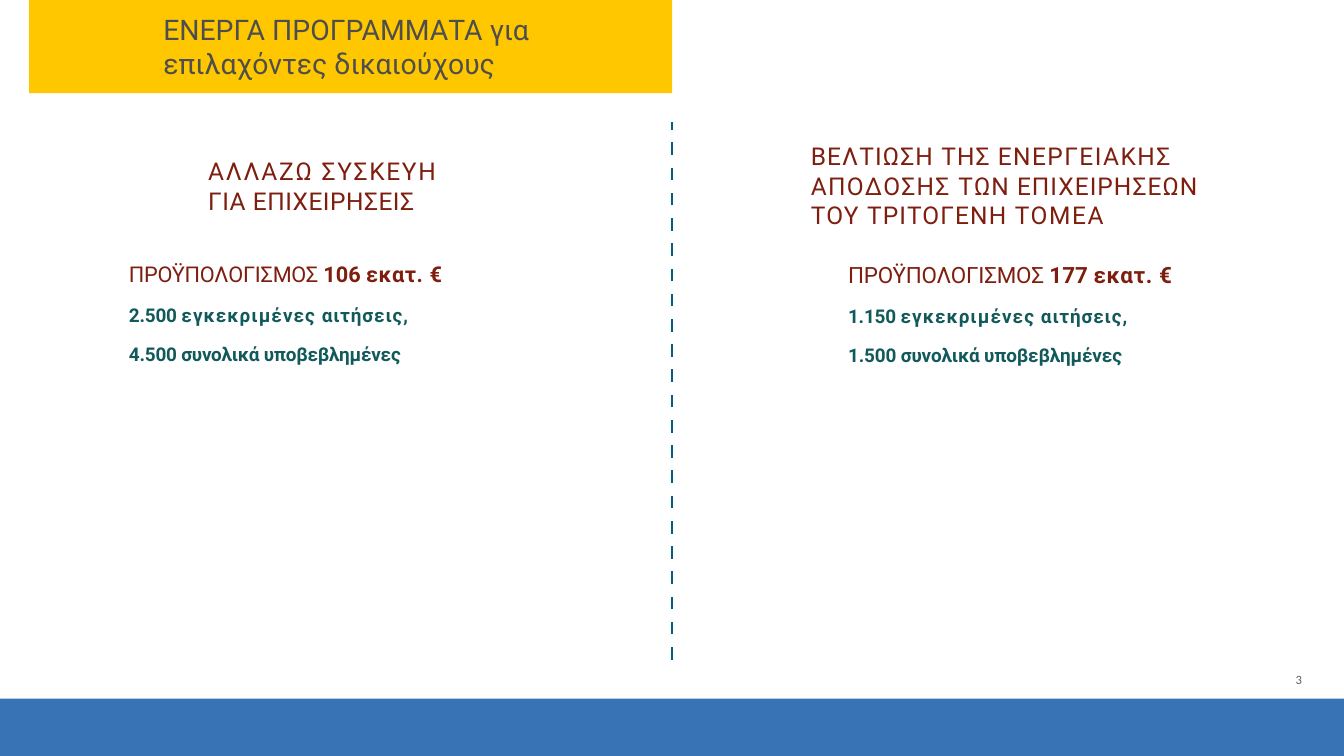
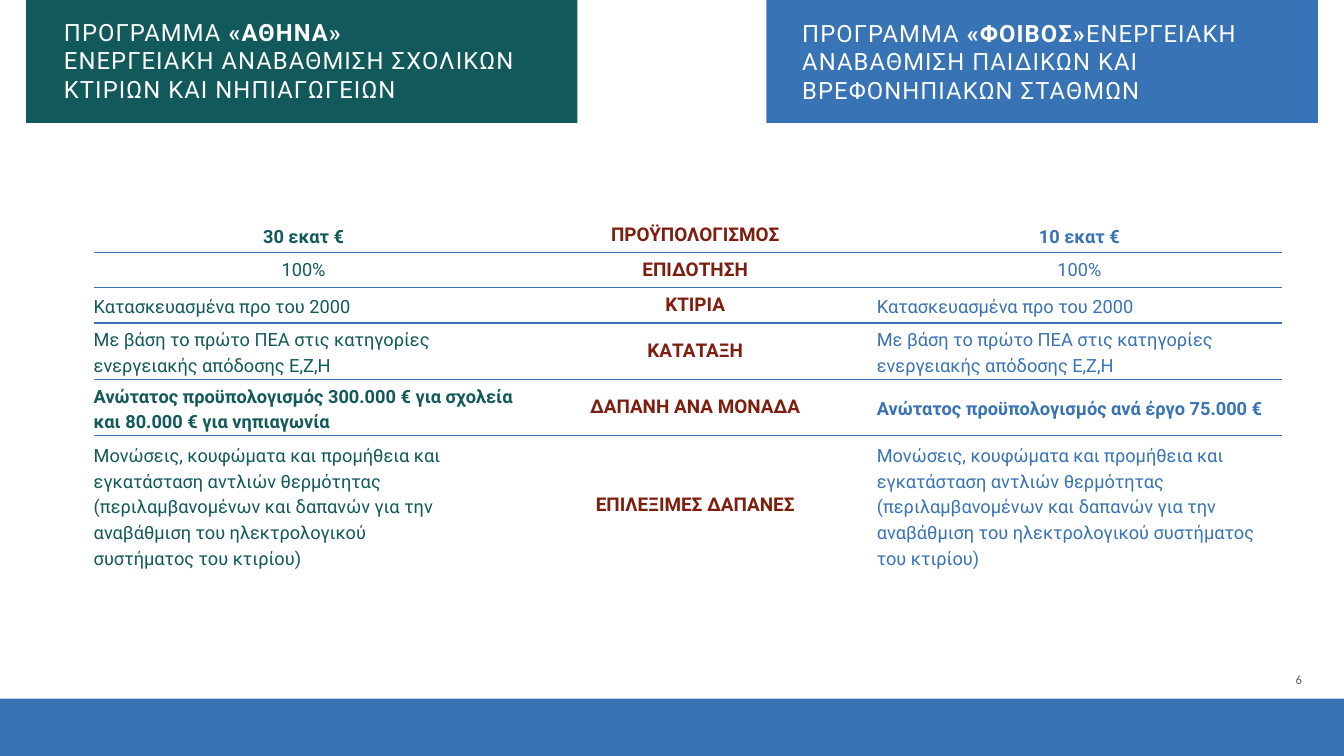
from dataclasses import dataclass

from lxml.etree import SubElement
from pptx import Presentation
from pptx.dml.color import RGBColor
from pptx.enum.shapes import MSO_CONNECTOR, MSO_SHAPE
from pptx.enum.text import MSO_ANCHOR, MSO_AUTO_SIZE, PP_ALIGN
from pptx.oxml import parse_xml
from pptx.oxml.ns import nsdecls, qn
from pptx.util import Inches, Pt

NO_GRID_STYLE = "{2D5ABB26-0587-4C30-8999-92F81FD0307C}"


@dataclass(frozen=True)
class Theme:
    font: str = "Roboto"
    number_font: str = "Calibri"
    white: str = "FFFFFF"
    blue: str = "3873B5"
    green: str = "11595A"
    red: str = "7E1E0F"
    yellow: str = "FFC700"
    gray: str = "4E4E4E"
    number_gray: str = "5E5E5E"
    divider: str = "045F7E"
    title_size: float = 40.5
    heading_size: float = 35
    banner_size: float = 34
    fact_size: float = 27
    label_size: float = 27
    cell_size: float = 26
    number_size: float = 18


THEME = Theme()


@dataclass(frozen=True)
class Run:
    text: str
    size: float
    color: str
    bold: bool = False
    spacing: float = 0
    font: str = THEME.font


class Deck:
    """Holds the theme and the slide being built."""

    def __init__(self, theme):
        self.theme = theme
        self.prs = Presentation()
        self.prs.slide_width, self.prs.slide_height = Inches(26.67), Inches(15)
        self.paint(self.prs.slide_master.background.fill, theme.blue)
        self.slide = None

    def new_slide(self, layout, number):
        """Start a slide with the white page, blue footer band and page number."""
        self.slide = self.prs.slides.add_slide(self.prs.slide_layouts[layout])
        self.band((-0.87, -0.51, 28.41, 14.37), self.theme.white)
        self.text_box((25.71, 13.33, 0.65, 0.27), [[
            Run(number, self.theme.number_size, self.theme.number_gray,
                spacing=3.9, font=self.theme.number_font)]])

    @staticmethod
    def paint(fill, color):
        fill.solid()
        fill.fore_color.rgb = RGBColor.from_string(color)

    def band(self, box, color):
        band = self.slide.shapes.add_shape(MSO_SHAPE.RECTANGLE, *map(Inches, box))
        band.shadow.inherit = False
        self.paint(band.fill, color)
        band.line.fill.background()

    def text_box(self, box, paragraphs, **layout):
        holder = self.slide.shapes.add_textbox(*map(Inches, box))
        self.fill_text(holder.text_frame, paragraphs, **layout)

    def placeholder(self, idx, box, paragraphs, **layout):
        """Move a placeholder in front of the bands and fill it."""
        holder = next(p for p in self.slide.placeholders
                      if p.placeholder_format.idx == idx)
        holder.left, holder.top, holder.width, holder.height = map(Inches, box)
        holder.element.getparent().append(holder.element)
        self.fill_text(holder.text_frame, paragraphs, **layout)

    def fill_text(self, frame, paragraphs, inset=0, anchor=MSO_ANCHOR.TOP,
                  gap=0, leading=1.0):
        """Gap and leading apply to the paragraphs after the first."""
        frame.word_wrap = True
        frame.auto_size = MSO_AUTO_SIZE.NONE
        frame.vertical_anchor = anchor
        frame.margin_left = frame.margin_right = Inches(inset)
        frame.margin_top = frame.margin_bottom = Inches(inset)
        for i, runs in enumerate(paragraphs):
            paragraph = frame.add_paragraph() if i else frame.paragraphs[0]
            self.fill_paragraph(paragraph, runs)
            paragraph.space_before = Pt(gap if i else 0)
            paragraph.line_spacing = leading if i else 1.0

    @staticmethod
    def fill_paragraph(paragraph, runs, align=PP_ALIGN.LEFT):
        properties = paragraph._p.get_or_add_pPr()
        properties.set("marL", "0")
        properties.set("indent", "0")
        SubElement(properties, qn("a:buNone"))
        paragraph.alignment = align
        for spec_run in runs:
            for i, line in enumerate(spec_run.text.split("\n")):
                if i:
                    paragraph.add_line_break()
                if not line:
                    continue
                run = paragraph.add_run()
                run.text = line
                run.font.name = spec_run.font
                run.font.size = Pt(spec_run.size)
                run.font.bold = spec_run.bold
                run.font.color.rgb = RGBColor.from_string(spec_run.color)
                if spec_run.spacing:
                    run._r.get_or_add_rPr().set("spc", str(round(spec_run.spacing * 100)))

    def dashed_line(self, start, end, color, width):
        line = self.slide.shapes.add_connector(
            MSO_CONNECTOR.STRAIGHT, *map(Inches, start + end))
        line.line.color.rgb = RGBColor.from_string(color)
        line.line.width = Pt(width)
        dashes = SubElement(line.line._get_or_add_ln(), qn("a:custDash"))
        SubElement(dashes, qn("a:ds"), d="600000", sp="600000")
        SubElement(line.element.spPr, qn("a:effectLst"))

    def table(self, position, widths, heights, rows):
        """Rows hold (runs, alignment, line spacing) for each cell."""
        size = (sum(widths), sum(heights))
        frame = self.slide.shapes.add_table(
            len(heights), len(widths), *map(Inches, position + size))
        table = frame.table
        table.first_row = table.horz_banding = False
        table._tbl.tblPr.find(qn("a:tableStyleId")).text = NO_GRID_STYLE
        for column, width in zip(table.columns, widths):
            column.width = Inches(width)
        for r, (height, row) in enumerate(zip(heights, rows)):
            table.rows[r].height = Inches(height)
            for c, (runs, align, leading) in enumerate(row):
                cell = table.cell(r, c)
                cell.fill.background()
                cell.vertical_anchor = MSO_ANCHOR.MIDDLE
                cell.margin_left = cell.margin_right = 0
                cell.margin_top = cell.margin_bottom = 0
                paragraph = cell.text_frame.paragraphs[0]
                self.fill_paragraph(paragraph, runs, align)
                paragraph.line_spacing = leading
                sides = ["lnT"] * (r > 0) + ["lnB"] * (r < len(heights) - 1)
                self.rule(cell, sides)

    def rule(self, cell, sides):
        properties = cell._tc.get_or_add_tcPr()
        for i, side in enumerate(sides):
            properties.insert(i, parse_xml(
                f'<a:{side} {nsdecls("a")} w="{Pt(2)}"><a:solidFill>'
                f'<a:srgbClr val="{self.theme.blue}"/></a:solidFill></a:{side}>'))


def heading(*words):
    return [[Run(text, THEME.heading_size, THEME.red, spacing=spacing)
             for text, spacing in words]]


def budget_facts(amount, size, approved, submitted, tightness):
    """Budget line followed by approved and submitted applications."""
    def budget(text, spacing, bold=True):
        return Run(text, size, THEME.red, bold, spacing)

    def fact(text, spacing):
        return Run(text, THEME.fact_size, THEME.green, True, spacing)

    return [
        [budget("ΠΡΟΫΠΟΛΟΓΙΣΜΟΣ ", -0.3, False), budget(f"{amount} ", 0),
         budget("εκατ. ", 0.8), budget("€", 5.3)],
        [fact(f"{approved} ", -0.3), fact("εγκεκριμένες ", 1.5),
         fact("αιτήσεις", 1.3), fact(",", -0.3)],
        [fact(f"{submitted} συνολικά υποβεβλημένες", tightness)],
    ]


def active_programmes(deck):
    deck.new_slide(4, "3")

    # Left programme
    deck.placeholder(1, (4.13, 3.1, 5.07, 1.13), heading(
        ("ΑΛΛΑΖΩ ", 2.5), ("ΣΥΣΚΕΥΗ ", 2.4), ("ΓΙΑ ", 0.8), ("ΕΠΙΧΕΙΡΗΣΕΙΣ", 0.7)))
    deck.placeholder(2, (2.56, 5.18, 9.24, 2.84),
                     budget_facts("106", 31, "2.500", "4.500", -0.3),
                     gap=20, leading=1.1)

    # Right programme
    deck.placeholder(3, (16.09, 2.8, 8.2, 1.69), heading(
        ("ΒΕΛΤΙΩΣΗ ", 1.6), ("ΤΗΣ ", 1.5), ("ΕΝΕΡΓΕΙΑΚΗΣ ", 2.1),
        ("ΑΠΟΔΟΣΗΣ ", 1.9), ("ΤΩΝ ΕΠΙΧΕΙΡΗΣΕΩΝ ", 1.5), ("ΤΟΥ ", 1.7),
        ("ΤΡΙΤΟΓΕΝΗ ", 1.6), ("ΤΟΜΕΑ", 2.3)))
    deck.placeholder(4, (16.83, 5.18, 8.09, 3.62),
                     budget_facts("177", 32, "1.150", "1.500", -0.2),
                     gap=20, leading=1.1)

    # Title banner and divider
    deck.band((0.58, -0.05, 12.76, 1.9), THEME.yellow)
    deck.placeholder(0, (3.24, 0.24, 7.84, 1.2), [[
        Run("ΕΝΕΡΓΑ ΠΡΟΓΡΑΜΜΑΤΑ για επιλαχόντες δικαιούχους",
            THEME.title_size, THEME.gray)]])
    deck.dashed_line((13.33, 13.09), (13.33, 2.43), THEME.divider, 3)


def banner_text(name, scope):
    parts = (("ΠΡΟΓΡΑΜΜΑ ", False), (name, True), (scope, False))
    return [[Run(text, THEME.banner_size, THEME.white, bold, 1.6)
             for text, bold in parts]]


def comparison_row(athina, label, foivos, bold=False,
                   align=PP_ALIGN.LEFT, leading=1.2):
    def side(text, color):
        return [Run(text, THEME.cell_size, color, bold)], align, leading

    middle = [Run(label, THEME.label_size, THEME.red, True)], PP_ALIGN.CENTER, 1.0
    return side(athina, THEME.green), middle, side(foivos, THEME.blue)


def school_programmes(deck):
    deck.new_slide(5, "6")

    # Programme banners
    for left, color in ((0.52, THEME.green), (15.21, THEME.blue)):
        deck.band((left, -0.01, 10.94, 2.45), color)
    deck.placeholder(0, (1.21, 0.29, 10.67, 1.79), banner_text(
        "«ΑΘΗΝΑ»\n", "ΕΝΕΡΓΕΙΑΚΗ ΑΝΑΒΑΘΜΙΣΗ ΣΧΟΛΙΚΩΝ ΚΤΙΡΙΩΝ ΚΑΙ ΝΗΠΙΑΓΩΓΕΙΩΝ"),
        inset=0.06)
    deck.text_box((15.86, 0.32, 10.8, 1.79), banner_text(
        "«ΦΟΙΒΟΣ»", "ΕΝΕΡΓΕΙΑΚΗ ΑΝΑΒΑΘΜΙΣΗ ΠΑΙΔΙΚΩΝ ΚΑΙ ΒΡΕΦΟΝΗΠΙΑΚΩΝ ΣΤΑΘΜΩΝ"),
        inset=0.06, anchor=MSO_ANCHOR.MIDDLE)

    # Comparison of the two programmes
    built = "Κατασκευασμένα προ του 2000"
    ranking = "Με βάση το πρώτο ΠΕΑ στις κατηγορίες ενεργειακής απόδοσης Ε,Ζ,Η"
    eligible = ("Μονώσεις, κουφώματα και προμήθεια και εγκατάσταση αντλιών "
                "θερμότητας (περιλαμβανομένων και δαπανών για την αναβάθμιση "
                "του ηλεκτρολογικού ")
    rows = [
        comparison_row("30 εκατ €", "ΠΡΟΫΠΟΛΟΓΙΣΜΟΣ", "10 εκατ €",
                       bold=True, align=PP_ALIGN.CENTER),
        comparison_row("100%", "ΕΠΙΔΟΤΗΣΗ", "100%",
                       align=PP_ALIGN.CENTER, leading=1.0),
        comparison_row(built, "ΚΤΙΡΙΑ", built),
        comparison_row(ranking, "ΚΑΤΑΤΑΞΗ", ranking),
        comparison_row("Ανώτατος προϋπολογισμός 300.000 € για σχολεία "
                       "και 80.000 € για νηπιαγωνία", "ΔΑΠΑΝΗ ΑΝΑ ΜΟΝΑΔΑ",
                       "Ανώτατος προϋπολογισμός ανά έργο 75.000 €", bold=True),
        comparison_row(eligible + "\nσυστήματος του κτιρίου)", "ΕΠΙΛΕΞΙΜΕΣ ΔΑΠΑΝΕΣ",
                       eligible + "συστήματος του κτιρίου)"),
    ]
    deck.table((1.86, 4.31), (8.33, 7.21, 8.04),
               (0.7, 0.7, 0.7, 1.12, 1.11, 2.78), rows)


def main():
    deck = Deck(THEME)
    active_programmes(deck)
    school_programmes(deck)
    deck.prs.save("out.pptx")


if __name__ == "__main__":
    main()
